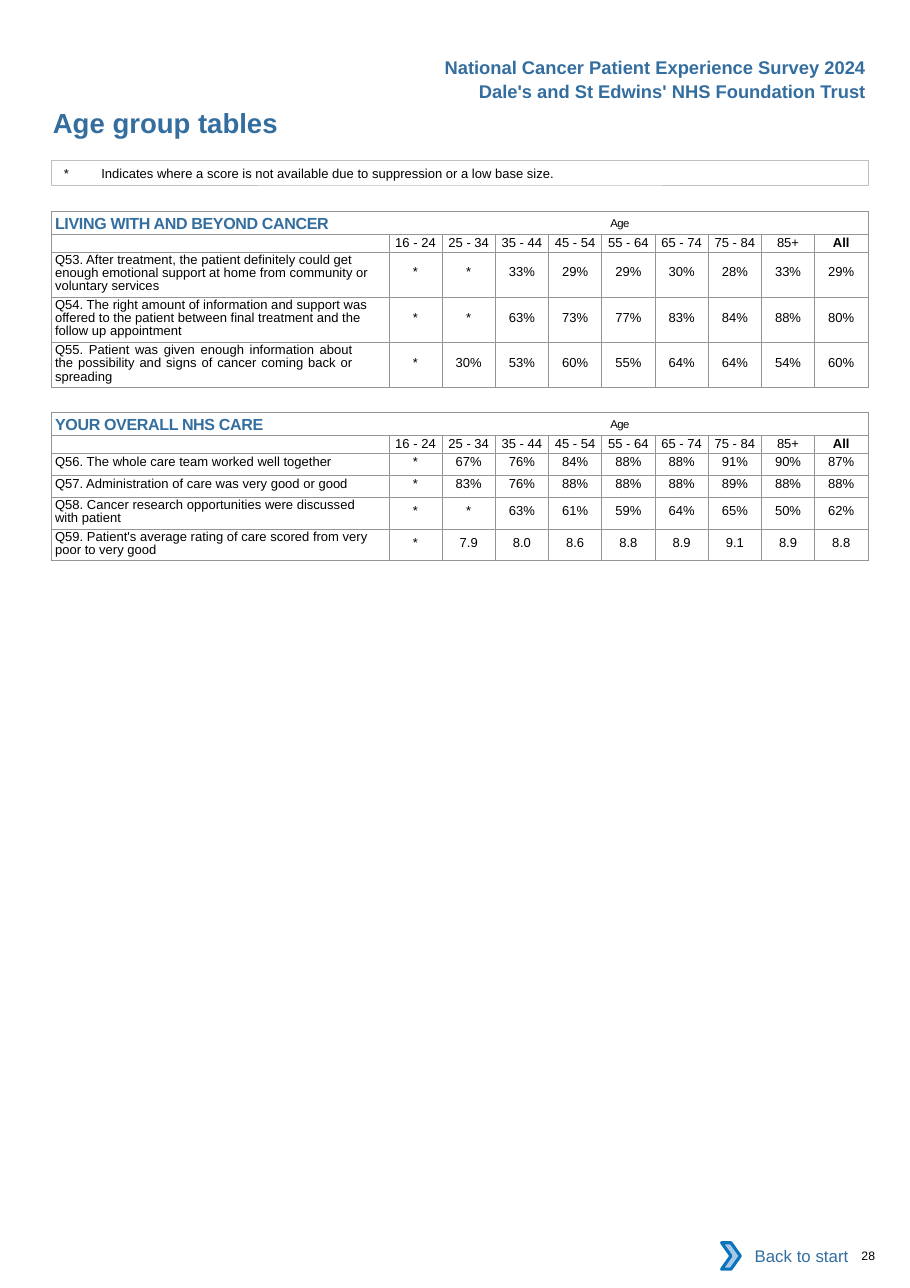
from lxml import etree
from pptx import Presentation, util as u
from pptx.dml.color import RGBColor
from pptx.enum import shapes, text
from pptx.oxml import ns

# Colours
BLUE = RGBColor(0x33, 0x6E, 0x9F)
BLACK = RGBColor(0, 0, 0)
WHITE = RGBColor(0xFF, 0xFF, 0xFF)
NOTE_GREY = RGBColor(0xBF, 0xBF, 0xBF)
GRID_GREY = RGBColor(0x93, 0x95, 0x98)
CHEVRON_FILL = RGBColor(0xA8, 0xC7, 0xE9)
CHEVRON_LINE = RGBColor(0x0A, 0x74, 0xBB)

# Page and table grid
PAGE_WIDTH, PAGE_HEIGHT = u.Inches(8.26), u.Inches(11.69)
LEFT, WIDTH = 5.69, 89.71
QUESTION_WIDTH = u.Inches(3.06)
HEADING_ROW, AGE_ROW = u.Inches(0.21), u.Inches(0.16)
# Lines in a question: row height, space above question, space above score
ROW_KINDS = {1: (0.2, 0.02, 0.02), 2: (0.29, 0.02, 0.06), 3: (0.41, 0.02, 0.12)}

# Text formats
BODY = {"name": "Arial", "size": u.Pt(8.5), "bold": False}
BOLD = {**BODY, "bold": True}
HEADING = {**BOLD, "size": u.Pt(10.5)}
BANNER = {**BOLD, "size": u.Pt(12)}
TITLE = {**BOLD, "size": u.Pt(18)}
LINK = {**BODY, "size": u.Pt(11)}
NUMBER = {**BODY, "size": u.Pt(8)}
AGE = {**BODY, "size": u.Pt(12.8)}
NO_MARGINS = (0, 0, 0, 0)
ALIGN = text.PP_ALIGN
ANCHOR = text.MSO_ANCHOR

# Content
AGES = ["16 - 24", "25 - 34", "35 - 44", "45 - 54", "55 - 64",
        "65 - 74", "75 - 84", "85+", "All"]
LIVING = [
    ("Q53. After treatment, the patient definitely could get enough emotional "
     "support at home from community or voluntary services", 3,
     "* * 33% 29% 29% 30% 28% 33% 29%"),
    ("Q54. The right amount of information and support was offered to the "
     "patient between final treatment and the follow up appointment", 3,
     "* * 63% 73% 77% 83% 84% 88% 80%"),
    ("Q55. Patient was given enough information about the possibility and "
     "signs of cancer coming back or spreading", 3,
     "* 30% 53% 60% 55% 64% 64% 54% 60%"),
]
OVERALL = [
    ("Q56. The whole care team worked well together", 1,
     "* 67% 76% 84% 88% 88% 91% 90% 87%"),
    ("Q57. Administration of care was very good or good", 1,
     "* 83% 76% 88% 88% 88% 89% 88% 88%"),
    ("Q58. Cancer research opportunities were discussed with patient", 2,
     "* * 63% 61% 59% 64% 65% 50% 62%"),
    ("Q59. Patient's average rating of care scored from very poor to very good", 2,
     "* 7.9 8.0 8.6 8.8 8.9 9.1 8.9 8.8"),
]
JUSTIFIED = "Q55"


def place(left, top, width, height):
    """Turn percentages of the page into lengths."""
    return [int(share * side / 100) for share, side in
            zip((left, top, width, height), (PAGE_WIDTH, PAGE_HEIGHT) * 2)]


def set_margins(target, margins):
    for side, length in zip(("left", "top", "right", "bottom"), margins):
        setattr(target, f"margin_{side}", u.Inches(length))


def add_span(para, words, style, color=BLACK, **extra):
    span = para.add_run()
    span.text = words
    for name, value in style.items():
        setattr(span.font, name, value)
    span.font.color.rgb = color
    for name, value in extra.items():
        span.font._element.set(name, str(value))


def format_para(para, align=ALIGN.LEFT, indent=0, spacing=None, tab=None):
    para.alignment = align
    if spacing:
        para.line_spacing = u.Pt(spacing)
    props = para._p.get_or_add_pPr()
    props.set("marL", str(u.Inches(indent)))
    if tab:
        # A first-line indent would reset the tab stops, so none is set
        stops = etree.SubElement(props, ns.qn("a:tabLst"))
        etree.SubElement(stops, ns.qn("a:tab"), pos=str(u.Inches(tab)), algn="l")


def write_box(box, words, style, color=BLUE, margins=NO_MARGINS,
              anchor=ANCHOR.TOP, wrap=True, **layout):
    frame = box.text_frame
    frame.word_wrap = wrap
    frame.auto_size = text.MSO_AUTO_SIZE.NONE
    frame.vertical_anchor = anchor
    set_margins(frame, margins)
    format_para(frame.paragraphs[0], **layout)
    add_span(frame.paragraphs[0], words, style, color)


def add_outline(owner, kind, area, fill=None, line=None, weight=0.5):
    box = owner.add_shape(kind, *place(*area))
    box.shadow.inherit = False
    for part, color in ((box.fill, fill), (box.line.fill, line)):
        if color is None:
            part.background()
        else:
            part.solid()
            part.fore_color.rgb = color
    if line is not None:
        box.line.width = u.Pt(weight)
    return box


def border_cell(cell):
    cell.fill.background()
    props = cell._tc.get_or_add_tcPr()
    for index, side in enumerate("LRTB"):
        edge = etree.Element(ns.qn(f"a:ln{side}"), w=str(u.Pt(0.5)))
        fill = etree.SubElement(edge, ns.qn("a:solidFill"))
        etree.SubElement(fill, ns.qn("a:srgbClr"), val=str(GRID_GREY))
        props.insert(index, edge)


def write_cell(cell, words, style=BODY, color=BLACK, margins=NO_MARGINS,
               anchor=ANCHOR.TOP, extra=None, **layout):
    set_margins(cell, margins)
    cell.vertical_anchor = anchor
    para = cell.text_frame.paragraphs[0]
    format_para(para, **layout)
    add_span(para, words, style, color, **(extra or {}))
    return para


def add_age_table(page, top, heading, questions):
    heights = [HEADING_ROW, AGE_ROW] + [
        u.Inches(ROW_KINDS[lines][0]) for _, lines, _ in questions]
    left, top, width, _ = place(LEFT, top, WIDTH, 0)
    table = page.shapes.add_table(len(heights), len(AGES) + 1,
                                  left, top, width, sum(heights)).table
    table.first_row = table.horz_banding = False
    for row, height in zip(table.rows, heights):
        row.height = height
    for index, column in enumerate(table.columns):
        column.width = (width - QUESTION_WIDTH) // len(AGES) if index else QUESTION_WIDTH
    for cell in table.iter_cells():
        border_cell(cell)

    # Heading and age groups
    table.cell(0, 0).merge(table.cell(0, len(AGES)))
    para = write_cell(table.cell(0, 0), heading + "\t", HEADING, BLUE,
                      anchor=ANCHOR.MIDDLE, extra={"spc": -20}, indent=0.03, tab=5.04)
    add_span(para, "Age", AGE, spc=-40, baseline=10000)
    corner = table.cell(1, 0)
    set_margins(corner, NO_MARGINS)
    etree.SubElement(corner.text_frame.paragraphs[0]._p, ns.qn("a:endParaRPr"), sz="850")
    for column, age in enumerate(AGES, 1):
        write_cell(table.cell(1, column), age, BOLD if age == "All" else BODY,
                   anchor=ANCHOR.MIDDLE, align=ALIGN.CENTER, spacing=9.9)

    # Questions and scores
    for row, (question, lines, scores) in enumerate(questions, 2):
        _, above_question, above_score = ROW_KINDS[lines]
        justified = question.startswith(JUSTIFIED)
        write_cell(table.cell(row, 0), question, indent=0.03,
                   margins=(0, above_question, 0.33 if justified else 0.15, 0),
                   align=ALIGN.JUSTIFY if justified else ALIGN.LEFT,
                   spacing=8.6 if lines > 1 else None)
        for column, score in enumerate(scores.split(), 1):
            write_cell(table.cell(row, column), score, align=ALIGN.CENTER,
                       margins=(0, above_score, 0, 0))


def add_back_link(page):
    group = page.shapes.add_group_shape().shapes
    label = add_outline(group, shapes.MSO_SHAPE.RECTANGLE,
                        (80.15, 95.72, 14.29, 3.59), fill=WHITE)
    write_box(label, "Back to start", LINK, margins=(0.1, 0.05, 0.1, 0.05),
              anchor=ANCHOR.MIDDLE, align=ALIGN.RIGHT)
    add_outline(group, shapes.MSO_SHAPE.CHEVRON, (79.3, 96.49, 2.06, 2.05),
                CHEVRON_FILL, CHEVRON_LINE, 2)


def main():
    deck = Presentation()
    deck.slide_width, deck.slide_height = PAGE_WIDTH, PAGE_HEIGHT
    page = deck.slides.add_slide(deck.slide_layouts[5])

    # Title and banner
    title = page.shapes.title
    title.left, title.top, title.width, title.height = place(LEFT, 8.21, 50, 2.57)
    write_box(title, "Age group tables", TITLE, indent=0.01)
    for words, area in (
            ("National Cancer Patient Experience Survey 2024", (47.46, 3.9, 48.91, 2.57)),
            ("Dale's and St Edwins' NHS Foundation Trust", (50.36, 5.82, 46, 2.57))):
        write_box(page.shapes.add_textbox(*place(*area)), words, BANNER,
                  margins=(0.1, 0.05, 0.1, 0.05), wrap=False, align=ALIGN.RIGHT)

    # Suppression note
    note = add_outline(page.shapes, shapes.MSO_SHAPE.RECTANGLE,
                       (LEFT, 12.49, WIDTH, 1.88), line=NOTE_GREY)
    write_box(note, "*\tIndicates where a score is not available due to "
              "suppression or a low base size.", BODY, BLACK,
              margins=(0, 0.04, 0, 0.04), indent=0.11, tab=0.34)

    # Score tables
    add_age_table(page, 16.4, "LIVING WITH AND BEYOND CANCER", LIVING)
    add_age_table(page, 32, "YOUR OVERALL NHS CARE", OVERALL)

    # Footer
    add_back_link(page)
    number = page.shapes.add_textbox(*place(93.46, 96.92, 6.17, 1.11))
    write_box(number, "28", NUMBER, BLACK, indent=0.1)
    deck.save("out.pptx")


if __name__ == "__main__":
    main()
